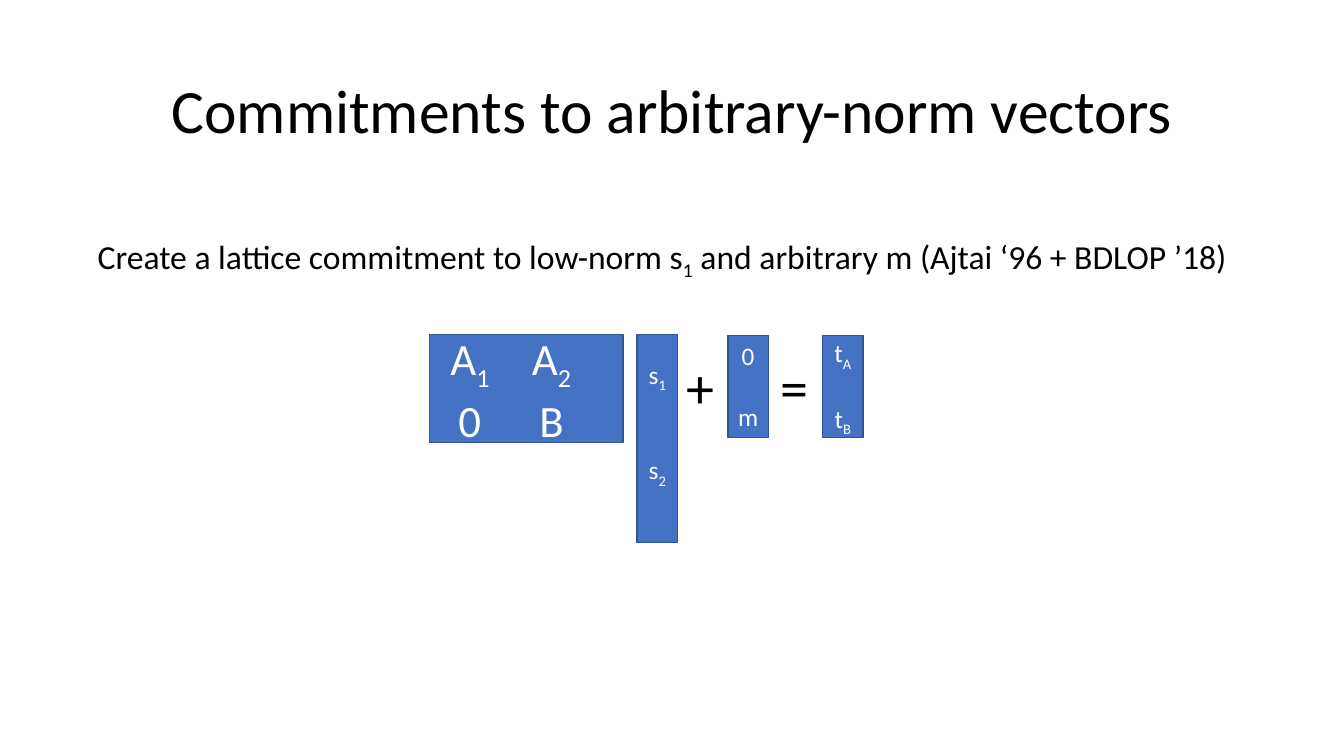
from dataclasses import dataclass

from lxml.etree import SubElement
from pptx import Presentation
from pptx.dml.color import RGBColor
from pptx.enum.shapes import MSO_SHAPE
from pptx.enum.text import MSO_ANCHOR as Anchor, MSO_AUTO_SIZE as AutoSize, PP_ALIGN as Align
from pptx.oxml.ns import qn
from pptx.util import Inches, Pt


@dataclass(frozen=True)
class Theme:
    font: str = "Calibri"
    ink: RGBColor = RGBColor(0, 0, 0)
    light: RGBColor = RGBColor(0xFF, 0xFF, 0xFF)
    fill: RGBColor = RGBColor(0x44, 0x72, 0xC4)
    line: RGBColor = RGBColor(0x32, 0x54, 0x91)
    title: int = 44
    operator: int = 40
    matrix: int = 32
    body: int = 24
    entry: int = 18


THEME = Theme()

# A formula line alternates normal and subscript pieces.
TITLE = ["Commitments to arbitrary-norm vectors"]
STATEMENT = ["Create a lattice commitment to low-norm s", "1",
             " and arbitrary m (Ajtai ‘96 + BDLOP ’18)"]
MATRIX = [["\tA", "1", "\tA", "2"], ["\t0\tB"]]
MATRIX_TABS = (0.4, 1.21)
MATRIX_BOX = (4.26, 3.32, 1.92, 1.07)
# box, top inset, empty lines between the entries, entries
VECTORS = [
    ((6.32, 3.32, 0.4, 2.06), 0.24, 2, [["s", "1"], ["s", "2"]]),
    ((7.22, 3.33, 0.4, 1.01), 0.05, 1, [["0"], ["m"]]),
    ((8.16, 3.33, 0.4, 1.01), 0.02, 1, [["t", "A"], ["t", "B"]]),
]
OPERATORS = [("+", 6.71), ("=", 7.64)]
LINE_HEIGHT = 1.22


def write(p, pieces, size, color, align=Align.LEFT):
    """Fill a paragraph, setting every second piece as a subscript."""
    p.alignment = align
    p.font.name, p.font.size = THEME.font, Pt(size)
    p.font.color.rgb = color
    for i, piece in enumerate(pieces):
        r = p.add_run()
        r.text = piece
        if i % 2:
            r._r.get_or_add_rPr().set("baseline", "-25000")


def add_tabs(p, stops):
    tabs = SubElement(p._p.get_or_add_pPr(), qn("a:tabLst"))
    for stop in stops:
        SubElement(tabs, qn("a:tab"), pos=str(Inches(stop)), algn="ctr")


def add_box(slide, box, anchor, top=0.05):
    sp = slide.shapes.add_shape(MSO_SHAPE.RECTANGLE, *map(Inches, box))
    sp.shadow.inherit = False
    sp.fill.solid()
    sp.fill.fore_color.rgb = THEME.fill
    sp.line.color.rgb = THEME.line
    sp.line.width = Pt(1)
    tf = sp.text_frame
    tf.vertical_anchor = anchor
    tf.margin_left = tf.margin_right = 0
    tf.margin_top, tf.margin_bottom = Inches(top), Inches(0.05)
    return tf


def paragraphs(tf, count):
    return [tf.paragraphs[0]] + [tf.add_paragraph() for _ in range(count - 1)]


def add_label(slide, box, pieces, size):
    tf = slide.shapes.add_textbox(*map(Inches, box)).text_frame
    tf.word_wrap = True
    tf.auto_size = AutoSize.SHAPE_TO_FIT_TEXT
    write(tf.paragraphs[0], pieces, size, THEME.ink)


def add_title(slide):
    sp = slide.shapes.title
    sp.left, sp.top, sp.width, sp.height = map(Inches, (0.92, 0.4, 11.5, 1.45))
    sp.text_frame.vertical_anchor = Anchor.MIDDLE
    p = sp.text_frame.paragraphs[0]
    p.line_spacing = 0.9
    write(p, TITLE, THEME.title, THEME.ink, Align.CENTER)


def add_matrix(slide):
    tf = add_box(slide, MATRIX_BOX, Anchor.MIDDLE)
    for p, row in zip(paragraphs(tf, len(MATRIX)), MATRIX):
        add_tabs(p, MATRIX_TABS)
        write(p, row, THEME.matrix, THEME.light)


def add_vector(slide, box, top, gap_lines, entries):
    tf = add_box(slide, box, Anchor.TOP, top)
    for i, (p, entry) in enumerate(zip(paragraphs(tf, len(entries)), entries)):
        if i:
            p.space_before = Pt(gap_lines * THEME.entry * LINE_HEIGHT)
        write(p, entry, THEME.entry, THEME.light, Align.CENTER)


def main():
    prs = Presentation()
    prs.slide_width, prs.slide_height = Inches(13.33), Inches(7.5)
    slide = prs.slides.add_slide(prs.slide_layouts[5])
    add_title(slide)
    add_label(slide, (0.87, 2.29, 11.88, 0.5), STATEMENT, THEME.body)
    add_matrix(slide)
    for vector in VECTORS:
        add_vector(slide, *vector)
    for sign, left in OPERATORS:
        add_label(slide, (left, 3.45, 0.5, 0.77), [sign], THEME.operator)
    prs.save("out.pptx")


if __name__ == "__main__":
    main()
